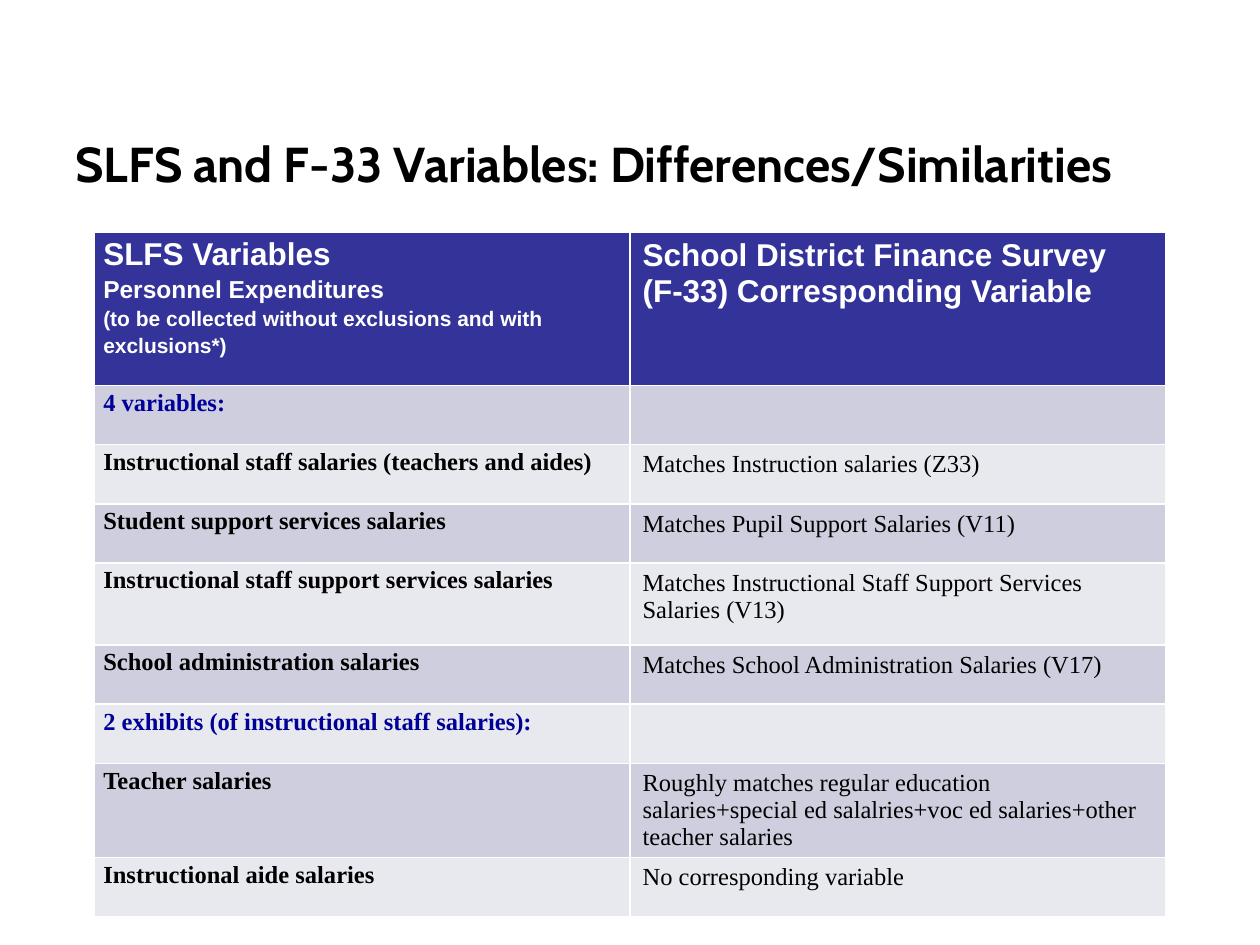
"""Build a slide comparing SLFS variables with F-33 variables."""
from dataclasses import dataclass

import pptx
import pptx.dml.color
import pptx.enum.text
import pptx.util

Inches = pptx.util.Inches
HEADER_FILL = "333399"
BAND_FILLS = ("CECEDE", "E8E8EF")
WHITE, BLACK, NAVY = "FFFFFF", "000000", "000099"


@dataclass
class Style:
    font: str
    size: int
    color: str
    bold: bool


@dataclass
class Row:
    variable: str
    match: str = ""
    height: float = 0.47
    color: str = BLACK


HEADER_LINES = (
    ("SLFS Variables", 18),
    ("Personnel Expenditures", 14),
    ("(to be collected without exclusions and with exclusions*)", 12),
)
HEADER_HEIGHT = 1.22
ROWS = (
    Row("4 variables:", color=NAVY),
    Row("Instructional staff salaries (teachers and aides)", "Matches Instruction salaries (Z33)"),
    Row("Student support services salaries", "Matches Pupil Support Salaries (V11)"),
    Row("Instructional staff support services salaries",
        "Matches Instructional Staff Support Services Salaries (V13)", height=0.65),
    Row("School administration salaries", "Matches School Administration Salaries (V17)"),
    Row("2 exhibits (of instructional staff salaries):", color=NAVY),
    Row("Teacher salaries",
        "Roughly matches regular education salaries+special ed salalries+voc ed salaries+other teacher salaries"),
    Row("Instructional aide salaries", "No corresponding variable"),
)


def rgb(color: str) -> pptx.dml.color.RGBColor:
    return pptx.dml.color.RGBColor.from_string(color)


def write(paragraph, text: str, style: Style) -> None:
    paragraph.text = text
    paragraph.font.name = style.font
    paragraph.font.size = pptx.util.Pt(style.size)
    paragraph.font.bold = style.bold
    paragraph.font.color.rgb = rgb(style.color)


def fill_cell(cell, color: str) -> None:
    cell.fill.solid()
    cell.fill.fore_color.rgb = rgb(color)


def write_variable_cell(cell, lines: list[tuple[str, Style]]) -> None:
    cell.margin_left = cell.margin_right = Inches(0.07)
    cell.margin_top = cell.margin_bottom = 0
    for index, (text, style) in enumerate(lines):
        frame = cell.text_frame
        paragraph = frame.add_paragraph() if index else frame.paragraphs[0]
        paragraph.line_spacing = 1.15
        write(paragraph, text, style)


def add_title(slide) -> None:
    title = slide.shapes.title
    title.left, title.top = Inches(0.5), Inches(1)
    title.width, title.height = Inches(9.17), Inches(0.58)
    title.text_frame.vertical_anchor = pptx.enum.text.MSO_ANCHOR.MIDDLE
    paragraph = title.text_frame.paragraphs[0]
    paragraph.alignment = pptx.enum.text.PP_ALIGN.LEFT
    write(paragraph, "SLFS and F-33 Variables: Differences/Similarities", Style("Cabin", 28, BLACK, True))


def add_comparison_table(slide) -> None:
    heights = [HEADER_HEIGHT] + [row.height for row in ROWS]
    table = slide.shapes.add_table(
        len(heights), 2, Inches(0.75), Inches(1.84), Inches(8.5), Inches(sum(heights))).table
    for table_row, height in zip(table.rows, heights):
        table_row.height = Inches(height)

    for cell in table.rows[0].cells:
        fill_cell(cell, HEADER_FILL)
    write_variable_cell(
        table.cell(0, 0), [(text, Style("Arial", size, WHITE, True)) for text, size in HEADER_LINES])
    write(table.cell(0, 1).text_frame.paragraphs[0],
          "School District Finance Survey (F-33) Corresponding Variable", Style("Arial", 18, WHITE, True))

    for index, row in enumerate(ROWS):
        variable_cell, match_cell = table.rows[index + 1].cells
        for cell in (variable_cell, match_cell):
            fill_cell(cell, BAND_FILLS[index % 2])
        write_variable_cell(variable_cell, [(row.variable, Style("Times New Roman", 14, row.color, True))])
        if row.match:
            write(match_cell.text_frame.paragraphs[0], row.match, Style("Times New Roman", 14, BLACK, False))


def main() -> None:
    presentation = pptx.Presentation()
    presentation.slide_width, presentation.slide_height = Inches(10), Inches(7.5)
    slide = presentation.slides.add_slide(presentation.slide_layouts[5])
    add_title(slide)
    add_comparison_table(slide)
    presentation.save("out.pptx")


if __name__ == "__main__":
    main()
